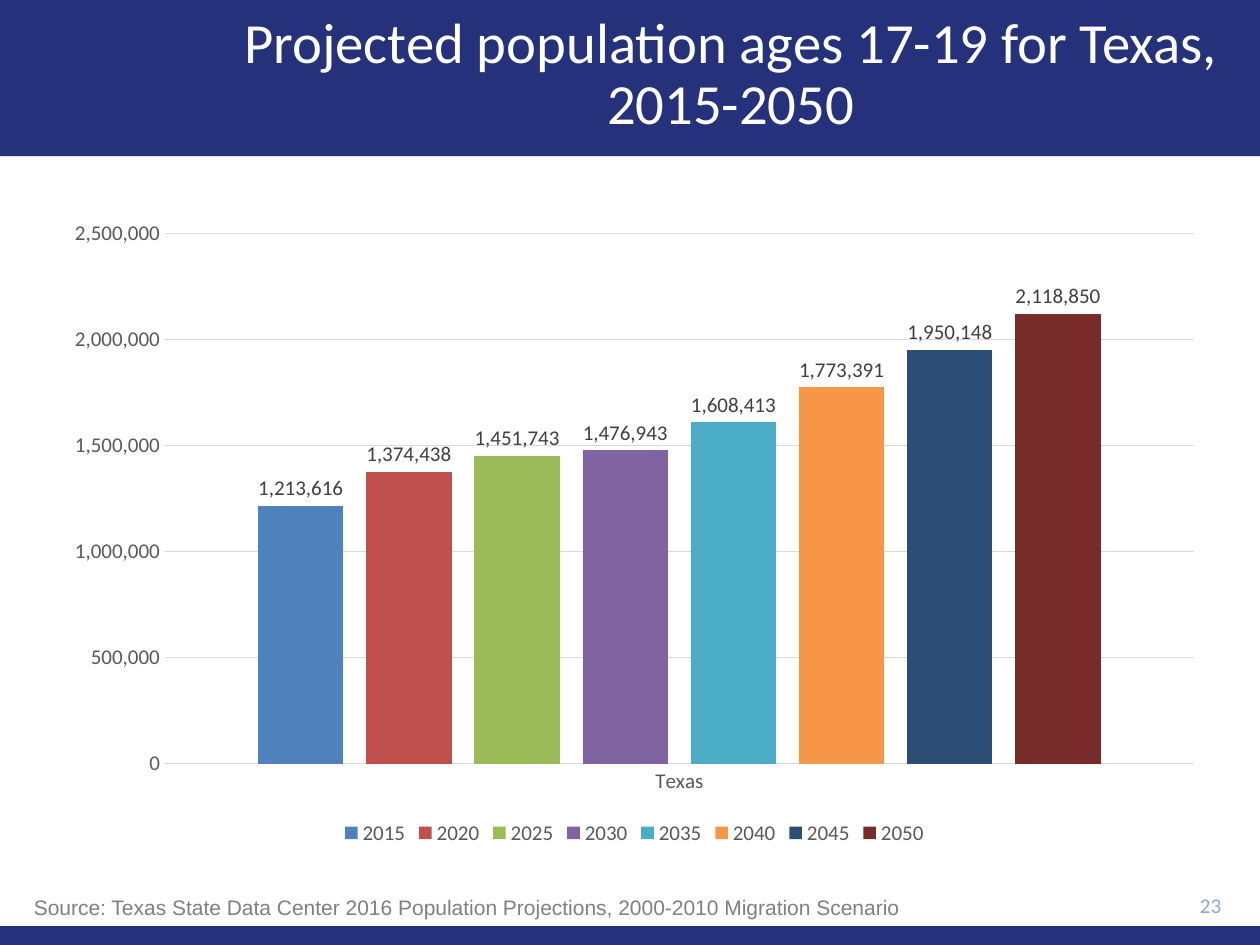
from pptx import Presentation
from pptx.chart.data import CategoryChartData
from pptx.dml.color import RGBColor
from pptx.enum.chart import XL_CHART_TYPE, XL_LABEL_POSITION, XL_LEGEND_POSITION, XL_TICK_MARK
from pptx.enum.shapes import MSO_SHAPE
from pptx.enum.text import MSO_ANCHOR, PP_ALIGN
from pptx.util import Inches, Pt

COLUMNS = XL_CHART_TYPE.COLUMN_CLUSTERED
OUTSIDE_END = XL_LABEL_POSITION.OUTSIDE_END
LEGEND_BOTTOM = XL_LEGEND_POSITION.BOTTOM
NO_TICK = XL_TICK_MARK.NONE
RECTANGLE = MSO_SHAPE.RECTANGLE
MIDDLE, TOP = MSO_ANCHOR.MIDDLE, MSO_ANCHOR.TOP
LEFT, CENTER, RIGHT = PP_ALIGN.LEFT, PP_ALIGN.CENTER, PP_ALIGN.RIGHT

WIDTH, HEIGHT = 10, 7.5
HEADER_HEIGHT, FOOTER_HEIGHT = 1.24, 0.15
NAVY, AXIS_TEXT, RULE, LABEL_TEXT = "25327B", "595959", "D9D9D9", "404040"
THOUSANDS = "#,##0"

PROJECTIONS = [
    ("2015", 1213616, "4F81BD"),
    ("2020", 1374438, "C0504D"),
    ("2025", 1451743, "9BBB59"),
    ("2030", 1476943, "8064A2"),
    ("2035", 1608413, "4BACC6"),
    ("2040", 1773391, "F79646"),
    ("2045", 1950148, "2C4D75"),
    ("2050", 2118850, "772C2A"),
]


def rgb(hex_color):
    return RGBColor.from_string(hex_color)


def style_font(font, size, color, name="Calibri"):
    font.size = Pt(size)
    font.name = name
    font.color.rgb = rgb(color)


def style_rule(line):
    line.color.rgb = rgb(RULE)
    line.width = Pt(0.75)


def write_line(frame, text, size, color, align, anchor, name="Calibri"):
    frame.word_wrap = True
    frame.vertical_anchor = anchor
    paragraph = frame.paragraphs[0]
    paragraph.alignment = align
    run = paragraph.add_run()
    run.text = text
    style_font(run.font, size, color, name)
    return paragraph


def add_band(slide, top, height):
    band = slide.shapes.add_shape(RECTANGLE, 0, Inches(top), Inches(WIDTH), Inches(height))
    band.shadow.inherit = False
    band.fill.solid()
    band.fill.fore_color.rgb = rgb(NAVY)
    band.line.fill.background()
    slide.shapes.title.element.addprevious(band.element)


def set_title(slide, text):
    title = slide.shapes.title
    title.left, title.top = Inches(1.7), Inches(0.1)
    title.width, title.height = Inches(8.2), Inches(1)
    paragraph = write_line(title.text_frame, text, 32.4, "FFFFFF", CENTER, MIDDLE)
    paragraph.line_spacing = 0.9


def add_note(slide, box, text, color, align, anchor, name="Calibri"):
    note = slide.shapes.add_textbox(*map(Inches, box))
    write_line(note.text_frame, text, 12, color, align, anchor, name)


def format_axes(chart):
    for axis in (chart.category_axis, chart.value_axis):
        axis.major_tick_mark = axis.minor_tick_mark = NO_TICK
        style_font(axis.tick_labels.font, 12, AXIS_TEXT)
    style_rule(chart.category_axis.format.line)
    values = chart.value_axis
    values.minimum_scale, values.maximum_scale = 0, 2500000
    values.major_unit = 500000
    values.format.line.fill.background()
    values.tick_labels.number_format = THOUSANDS
    values.tick_labels.number_format_is_linked = False
    style_rule(values.major_gridlines.format.line)


def format_series(series, color):
    series.format.fill.solid()
    series.format.fill.fore_color.rgb = rgb(color)
    labels = series.data_labels
    labels.show_value = True
    labels.position = OUTSIDE_END
    labels.number_format = THOUSANDS
    labels.number_format_is_linked = False
    style_font(labels.font, 12, LABEL_TEXT)


def add_projection_chart(slide):
    population = CategoryChartData(number_format=THOUSANDS)
    population.categories = ["Texas"]
    for year, people, _ in PROJECTIONS:
        population.add_series(year, [people])
    box = map(Inches, (0.41, 1.65, 9.25, 5.1))
    chart = slide.shapes.add_chart(COLUMNS, *box, population).chart
    style_font(chart.font, 10, "000000")
    chart.has_title = False
    chart.has_legend = True
    chart.legend.position = LEGEND_BOTTOM
    chart.legend.include_in_layout = False
    style_font(chart.legend.font, 12, AXIS_TEXT)
    format_axes(chart)
    plot = chart.plots[0]
    plot.vary_by_categories = False
    plot.gap_width, plot.overlap = 219, -27
    for series, (_, _, color) in zip(plot.series, PROJECTIONS):
        format_series(series, color)


def main():
    deck = Presentation()
    deck.slide_width, deck.slide_height = Inches(WIDTH), Inches(HEIGHT)
    slide = deck.slides.add_slide(deck.slide_layouts[5])
    add_band(slide, 0, HEADER_HEIGHT)
    add_band(slide, HEIGHT - FOOTER_HEIGHT, FOOTER_HEIGHT)
    set_title(slide, "Projected population ages 17-19 for Texas, 2015-2050")
    add_projection_chart(slide)
    add_note(slide, (8.9, 7.01, 0.89, 0.34), "23", "8FA5D1", RIGHT, MIDDLE)
    add_note(slide, (0.17, 7.05, 9.58, 0.3),
             "Source: Texas State Data Center 2016 Population Projections, 2000-2010 Migration Scenario",
             "808080", LEFT, TOP, "Arial")
    deck.save("out.pptx")


if __name__ == "__main__":
    main()
